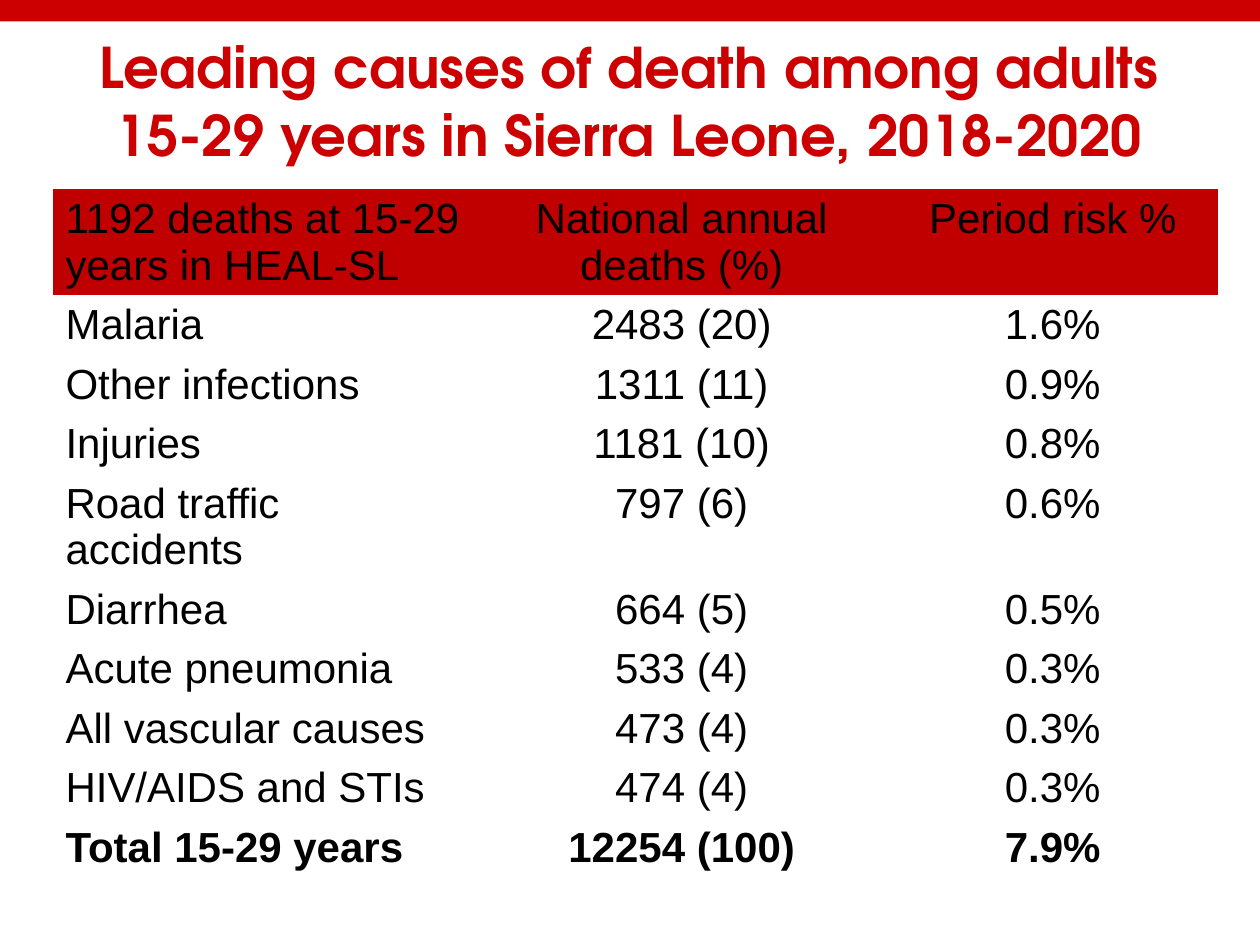
from pptx import Presentation
from pptx.dml.color import RGBColor
from pptx.enum.shapes import MSO_SHAPE as Shape
from pptx.enum.text import MSO_ANCHOR as Anchor, PP_ALIGN as Align
from pptx.oxml.ns import qn
from pptx.util import Inches, Pt

COLORS = {"band": "CC0000", "title": "CC0000", "header": "C00000", "text": "000000"}
PLAIN_TABLE_STYLE = "{2D5ABB26-0587-4C30-8999-92F81FD0307C}"  # no style, no grid

TITLE = "Leading causes of death among adults 15-29 years in Sierra Leone, 2018-2020"
COLUMN_WIDTHS = [3.36, 3.26, 2.63]
ROW_HEIGHT = 0.41
ROWS = [
    ("1192 deaths at 15-29 years in HEAL-SL", "National annual deaths (%)", "Period risk %"),
    ("Malaria", "2483 (20)", "1.6%"),
    ("Other infections", "1311 (11)", "0.9%"),
    ("Injuries", "1181 (10)", "0.8%"),
    ("Road traffic accidents", "797 (6)", "0.6%"),
    ("Diarrhea", "664 (5)", "0.5%"),
    ("Acute pneumonia", "533 (4)", "0.3%"),
    ("All vascular causes", "473 (4)", "0.3%"),
    ("HIV/AIDS and STIs", "474 (4)", "0.3%"),
    ("Total 15-29 years", "12254 (100)", "7.9%"),
]


def color(name):
    return RGBColor.from_string(COLORS[name])


def write(frame, text, align, color_name, **font_format):
    para = frame.paragraphs[0]
    para.alignment = align
    span = para.add_run()
    span.text = text
    span.font.color.rgb = color(color_name)
    for name, value in font_format.items():
        setattr(span.font, name, value)


def add_band(page):
    band = page.shapes.add_shape(Shape.RECTANGLE, 0, 0, Inches(10), Inches(0.17))
    band.shadow.inherit = False
    band.fill.solid()
    band.fill.fore_color.rgb = color("band")
    band.line.fill.background()


def add_title(page):
    box = page.shapes.title
    placement = {"left": 0.33, "top": 0.17, "width": 9.33, "height": 1.25}
    for name, value in placement.items():
        setattr(box, name, Inches(value))
    box.text_frame.word_wrap = True
    box.text_frame.vertical_anchor = Anchor.MIDDLE
    write(box.text_frame, TITLE, Align.CENTER, "title",
          name="TeX Gyre Adventor", size=Pt(32), bold=True)


def add_causes_table(page):
    holder = page.shapes.add_table(
        len(ROWS), len(COLUMN_WIDTHS), Inches(0.42), Inches(1.5),
        Inches(sum(COLUMN_WIDTHS)), Inches(ROW_HEIGHT * len(ROWS)))
    table = holder.table
    table.first_row = table.horz_banding = False
    next(holder.element.iter(qn("a:tableStyleId"))).text = PLAIN_TABLE_STYLE

    for column, width in zip(table.columns, COLUMN_WIDTHS):
        column.width = Inches(width)
    for row_index, texts in enumerate(ROWS):
        table.rows[row_index].height = Inches(ROW_HEIGHT)
        is_total = row_index == len(ROWS) - 1
        for column_index, text in enumerate(texts):
            cell = table.cell(row_index, column_index)
            if row_index == 0:
                cell.fill.solid()
                cell.fill.fore_color.rgb = color("header")
            else:
                cell.fill.background()
            align = Align.CENTER if column_index else Align.LEFT
            write(cell.text_frame, text, align, "text",
                  name="Arial", size=Pt(24), bold=is_total)


def main():
    deck = Presentation()
    deck.slide_width, deck.slide_height = Inches(10), Inches(7.5)
    page = deck.slides.add_slide(deck.slide_layouts[5])  # title only
    add_band(page)
    add_title(page)
    add_causes_table(page)
    deck.save("out.pptx")


if __name__ == "__main__":
    main()
